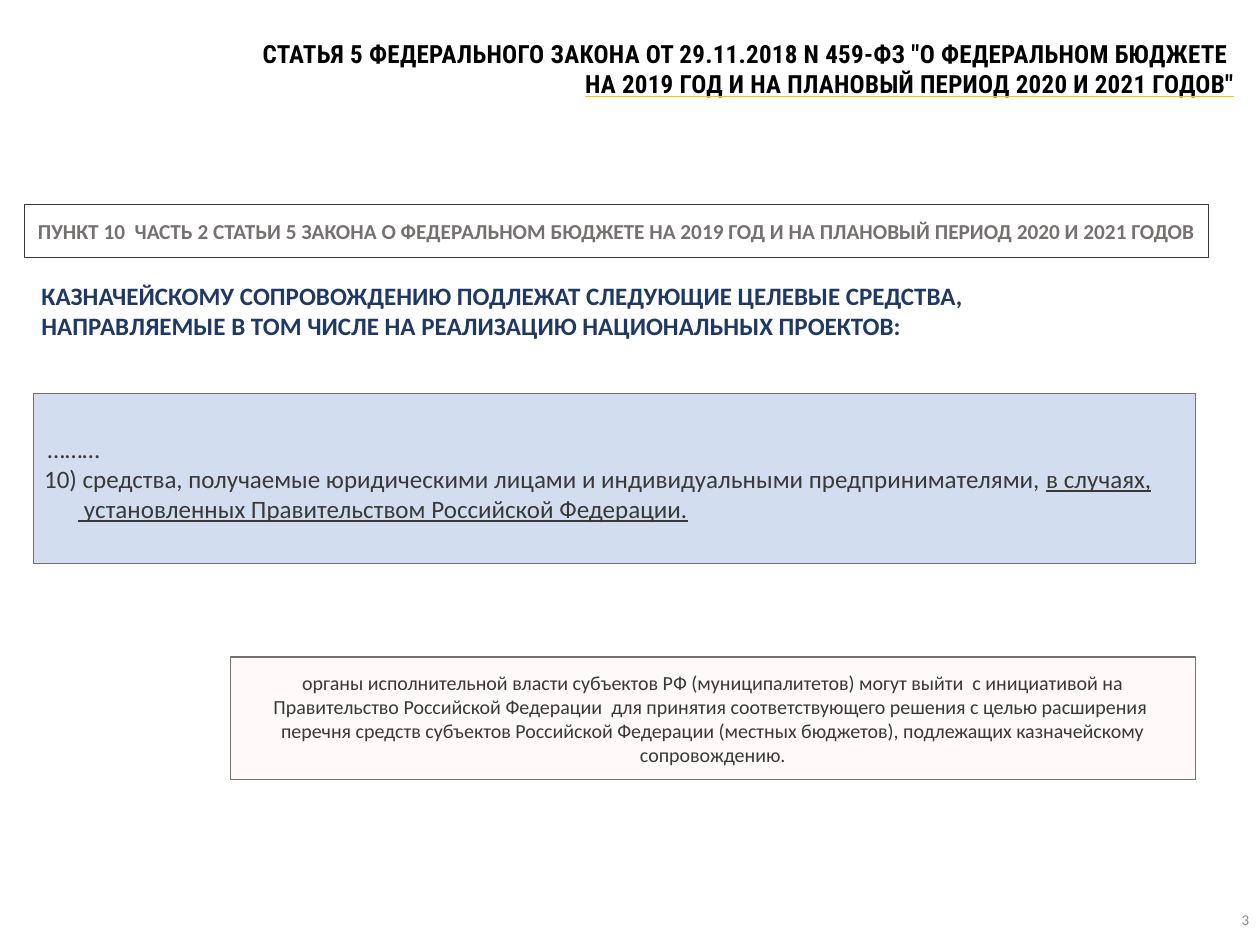
from lxml.etree import SubElement
from pptx import Presentation
from pptx.dml.color import RGBColor
from pptx.enum.shapes import MSO_SHAPE
from pptx.enum.text import MSO_ANCHOR, PP_ALIGN
from pptx.oxml.ns import qn
from pptx.util import Inches, Pt

BODY_FONT = "Calibri"
TITLE_FONT = "Roboto Condensed"
DARK_GREY = "3B3838"
MID_GREY = "767171"


def color(value):
    return RGBColor.from_string(value)


def set_alpha(fill, percent):
    shade = fill._xPr.find(qn("a:solidFill"))[0]
    SubElement(shade, qn("a:alpha")).set("val", str(percent * 1000))


def add_panel(slide, box, fill, outline, opacity=100):
    panel = slide.shapes.add_shape(MSO_SHAPE.RECTANGLE, *map(Inches, box))
    panel.shadow.inherit = False
    panel.fill.solid()
    panel.fill.fore_color.rgb = color(fill)
    if opacity < 100:
        set_alpha(panel.fill, opacity)
    panel.line.color.rgb = color(outline)
    panel.line.width = Pt(1)
    return panel


def prepare_frame(holder, anchor=MSO_ANCHOR.MIDDLE, side=0.12, edge=0.06):
    frame = holder.text_frame
    layout = {
        "word_wrap": True,
        "vertical_anchor": anchor,
        "margin_left": Inches(side),
        "margin_right": Inches(side),
        "margin_top": Inches(edge),
        "margin_bottom": Inches(edge),
    }
    for name, value in layout.items():
        setattr(frame, name, value)
    return frame


def write_lines(frame, lines, size, tint, font=BODY_FONT, bold=False,
                align=PP_ALIGN.LEFT):
    looks = {"name": font, "size": Pt(size), "bold": bold}
    for index, pieces in enumerate(lines):
        line = frame.add_paragraph() if index else frame.paragraphs[0]
        line.alignment = align
        for words, underlined in pieces:
            run = line.add_run()
            run.text = words
            for name, value in {**looks, "underline": underlined}.items():
                setattr(run.font, name, value)
            run.font.color.rgb = color(tint)
    return frame.paragraphs


def add_clause_heading(slide, box):
    heading = add_panel(slide, box, "FFFFFF", DARK_GREY, 92)
    write_lines(prepare_frame(heading), [[(
        "ПУНКТ 10  ЧАСТЬ 2 СТАТЬИ 5 ЗАКОНА О ФЕДЕРАЛЬНОМ БЮДЖЕТЕ "
        "НА 2019 ГОД И НА ПЛАНОВЫЙ ПЕРИОД 2020 И 2021 ГОДОВ", False)]],
        17, MID_GREY, bold=True, align=PP_ALIGN.CENTER)


def add_clause_text(slide, box):
    clause = add_panel(slide, box, "D2DEEF", MID_GREY)
    lines = write_lines(prepare_frame(clause), [
        [("………", False)],
        [("10) средства, получаемые юридическими лицами и "
          "индивидуальными предпринимателями, ", False), ("в случаях,", True)],
        [(" установленных Правительством Российской Федерации.", True)],
    ], 20, DARK_GREY)
    for line, indent in zip(lines, (0.04, 0, 0.38)):
        line._p.get_or_add_pPr().set("marL", str(Inches(indent)))


def add_lead(slide, box):
    lead = slide.shapes.add_textbox(*map(Inches, box))
    write_lines(prepare_frame(lead, MSO_ANCHOR.TOP, 0.14, 0.07), [[(
        "КАЗНАЧЕЙСКОМУ СОПРОВОЖДЕНИЮ ПОДЛЕЖАТ СЛЕДУЮЩИЕ ЦЕЛЕВЫЕ СРЕДСТВА, "
        "НАПРАВЛЯЕМЫЕ В ТОМ ЧИСЛЕ НА РЕАЛИЗАЦИЮ НАЦИОНАЛЬНЫХ ПРОЕКТОВ:",
        False)]], 20, "203864", bold=True)


def add_initiative_note(slide, box):
    note = add_panel(slide, box, "FFEFEF", MID_GREY, 33)
    write_lines(prepare_frame(note), [[(
        "органы исполнительной власти субъектов РФ (муниципалитетов) могут "
        "выйти  с инициативой на Правительство Российской Федерации  для "
        "принятия соответствующего решения с целью расширения  перечня "
        "средств субъектов Российской Федерации (местных бюджетов), "
        "подлежащих казначейскому сопровождению.", False)]],
        16, DARK_GREY, align=PP_ALIGN.CENTER)


def add_title(slide, box):
    title = slide.shapes.add_textbox(*map(Inches, box))
    lines = write_lines(prepare_frame(title, MSO_ANCHOR.TOP), [
        [('СТАТЬЯ 5 ФЕДЕРАЛЬНОГО ЗАКОНА ОТ 29.11.2018 N 459-ФЗ '
          '"О ФЕДЕРАЛЬНОМ БЮДЖЕТЕ ', False)],
        [('НА 2019 ГОД И НА ПЛАНОВЫЙ ПЕРИОД 2020 И 2021 ГОДОВ"', True)],
    ], 20, "000000", TITLE_FONT, True, PP_ALIGN.RIGHT)
    for line in lines:
        properties = line.runs[0]._r.get_or_add_rPr()
        properties.set("spc", "20")
        if line.runs[0].font.underline:
            underline = SubElement(properties, qn("a:uFill"))
            solid = SubElement(underline, qn("a:solidFill"))
            SubElement(solid, qn("a:srgbClr")).set("val", "FFC000")
            properties.find(qn("a:solidFill")).addnext(underline)


def add_page_number(slide, box):
    number = slide.shapes.add_textbox(*map(Inches, box))
    write_lines(prepare_frame(number), [[("3", False)]], 12, "8C8C8C",
                align=PP_ALIGN.RIGHT)


def main():
    deck = Presentation()
    deck.slide_width = Inches(14)
    deck.slide_height = Inches(10.5)
    slide = deck.slides.add_slide(deck.slide_layouts[6])
    add_clause_heading(slide, (0.27, 2.27, 13.16, 0.59))
    add_clause_text(slide, (0.37, 4.37, 12.91, 1.89))
    add_lead(slide, (0.32, 3.05, 12.31, 0.81))
    add_initiative_note(slide, (2.56, 7.3, 10.72, 1.36))
    add_title(slide, (0.27, 0.37, 13.56, 0.79))
    add_page_number(slide, (10.85, 9.94, 3.15, 0.56))
    deck.save("out.pptx")


if __name__ == "__main__":
    main()
